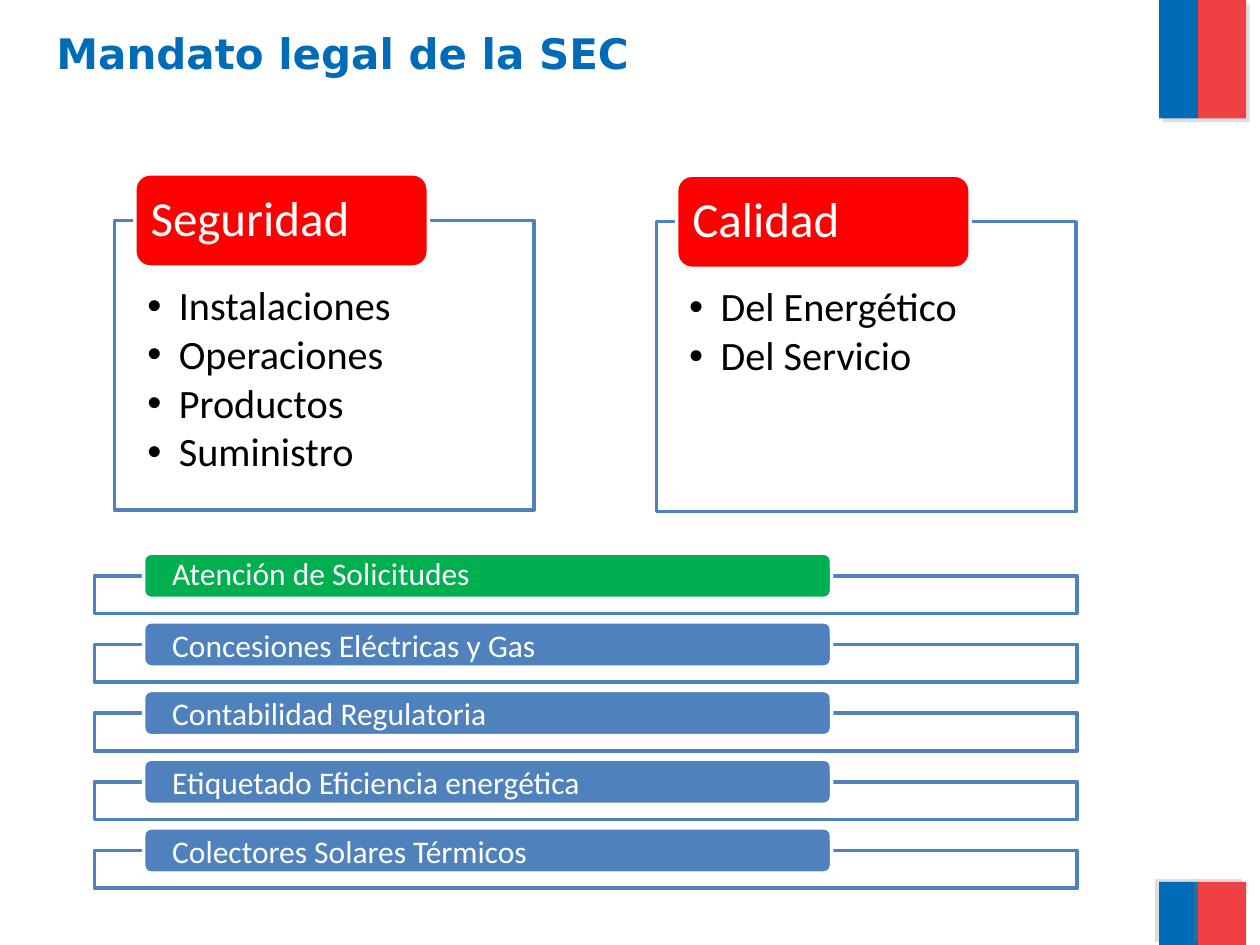
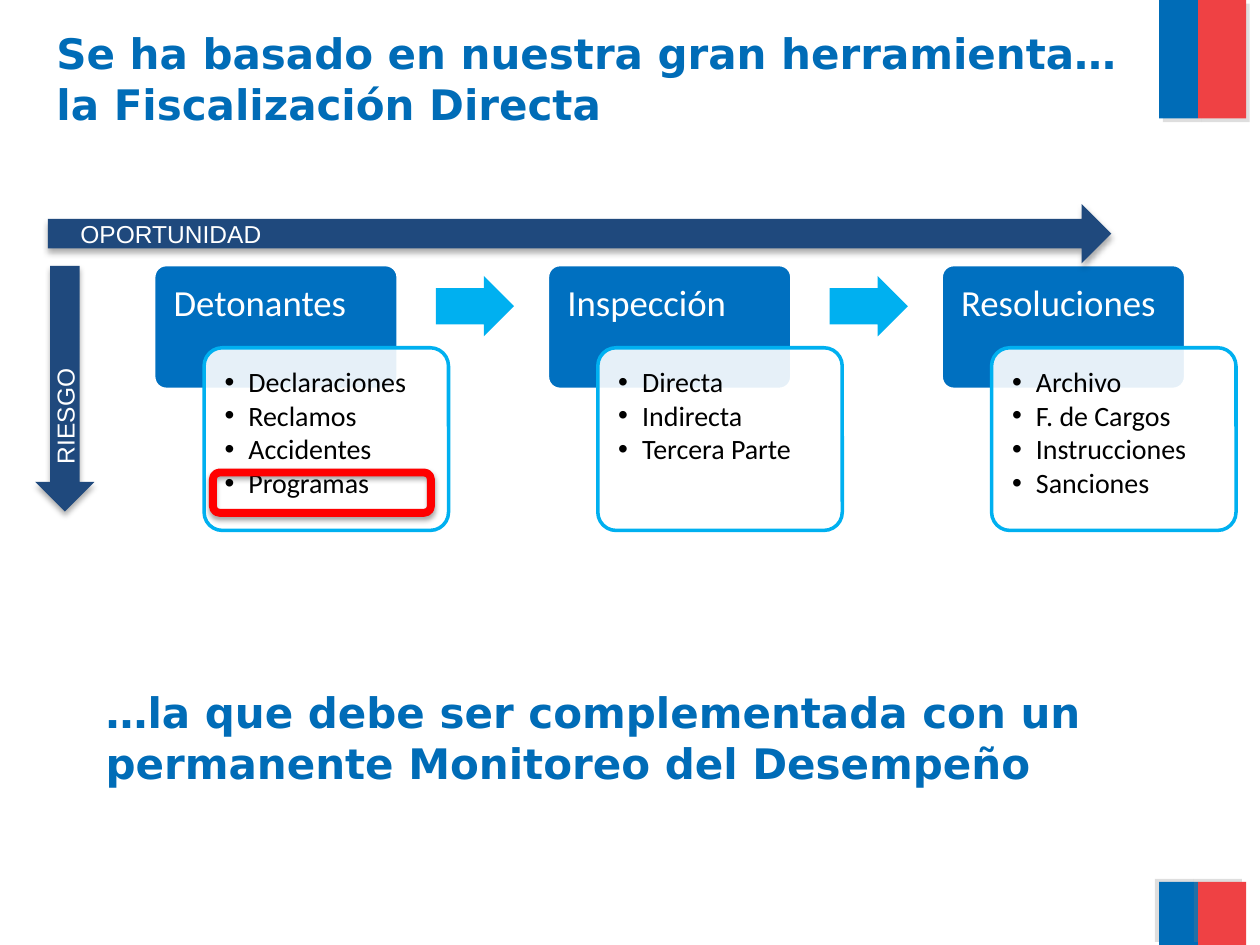
import lxml.etree
import pptx
import pptx.dml.color
import pptx.enum.shapes
import pptx.enum.text
import pptx.oxml.ns
import pptx.util

Inches, Pt = pptx.util.Inches, pptx.util.Pt
qn = pptx.oxml.ns.qn
PRESET = pptx.enum.shapes.MSO_SHAPE
ANCHOR = pptx.enum.text.MSO_ANCHOR

# Content
MANDATE_TITLE = "Mandato legal de la SEC"
MANDATES = [  # left, top, heading, items
    (0.91, 1.75, "Seguridad", ["Instalaciones", "Operaciones", "Productos", "Suministro"]),
    (5.21, 1.76, "Calidad", ["Del Energético", "Del Servicio"]),
]
DUTIES = [
    ("Atención de Solicitudes", "00B050"),
    ("Concesiones Eléctricas y Gas", "4F81BD"),
    ("Contabilidad Regulatoria", "4F81BD"),
    ("Etiquetado Eficiencia energética", "4F81BD"),
    ("Colectores Solares Térmicos", "4F81BD"),
]
INSPECTION_TITLE = "Se ha basado en nuestra gran herramienta…la Fiscalización Directa"
STAGES = [
    ("Detonantes", ["Declaraciones", "Reclamos", "Accidentes", "Programas"]),
    ("Inspección", ["Directa", "Indirecta", "Tercera Parte"]),
    ("Resoluciones", ["Archivo", "F. de Cargos", "Instrucciones", "Sanciones"]),
]
AXES = [  # box, preset, label, text direction
    ((0.38, 1.62, 8.44, 0.47), PRESET.RIGHT_ARROW, "OPORTUNIDAD", "horz"),
    ((0.28, 2.11, 0.47, 1.95), PRESET.DOWN_ARROW, "RIESGO", "vert270"),
]
CLOSING = "…la que debe ser complementada con un permanente Monitoreo del Desempeño"

# Shared look
BRAND_BLUE, BRAND_RED = "006CB7", "EF4144"
FRAME_BLUE, STAGE_BLUE, SKY, NAVY = "4F81BD", "0070C0", "00B0F0", "1F497D"
WHITE, BLACK, RED = "FFFFFF", "000000", "FF0000"
BANDS = [  # box, colour, shadow angle
    ((9.2, -0.01, 0.31, 0.95), BRAND_BLUE, 45),
    ((9.51, 0, 0.38, 0.94), BRAND_RED, 45),
    ((9.2, 7, 0.31, 0.5), BRAND_BLUE, 215),
    ((9.51, 7, 0.38, 0.5), BRAND_RED, 215),
]


def rgb(color):
    return pptx.dml.color.RGBColor.from_string(color)


def add_shadow(shape, color, opacity, blur, distance, angle):
    effects = shape._element.spPr.find(qn("a:effectLst"))
    shadow = lxml.etree.SubElement(
        effects, qn("a:outerShdw"), blurRad=str(Pt(blur)), dist=str(Pt(distance)),
        dir=str(angle * 60000), algn="ctr", rotWithShape="0")
    tint = lxml.etree.SubElement(shadow, qn("a:srgbClr"), val=color)
    lxml.etree.SubElement(tint, qn("a:alpha"), val=str(opacity * 1000))


def add_box(slide, box, fill=None, line=None, width=2, preset=PRESET.RECTANGLE,
            adjust=(), opacity=100, shadow=None):
    shape = slide.shapes.add_shape(preset, *map(Inches, box))
    shape.shadow.inherit = False
    for index, value in enumerate(adjust):
        shape.adjustments[index] = value
    if fill:
        shape.fill.solid()
        shape.fill.fore_color.rgb = rgb(fill)
        if opacity < 100:
            tint = shape._element.spPr.find(qn("a:solidFill"))[0]
            lxml.etree.SubElement(tint, qn("a:alpha"), val=str(opacity * 1000))
    else:
        shape.fill.background()
    if line:
        shape.line.color.rgb = rgb(line)
        shape.line.width = Pt(width)
    else:
        shape.line.fill.background()
    if shadow:
        add_shadow(shape, *shadow)
    return shape


def write(shape, lines, size, color, font="Calibri", insets=(0.1, 0.05, 0.1, 0.05),
          anchor=ANCHOR.TOP, bold=False, spacing=None, after=0, indent=0, bullet=False):
    frame = shape.text_frame
    frame.word_wrap = True
    frame.vertical_anchor = anchor
    (frame.margin_left, frame.margin_top,
     frame.margin_right, frame.margin_bottom) = map(Inches, insets)
    for index, text in enumerate(lines):
        paragraph = frame.add_paragraph() if index else frame.paragraphs[0]
        properties = paragraph._p.get_or_add_pPr()
        properties.set("marL", str(Inches(indent)))
        if bullet:
            properties.set("indent", str(-Inches(indent)))
            lxml.etree.SubElement(properties, qn("a:buFont"), typeface="Arial")
            lxml.etree.SubElement(properties, qn("a:buChar"), char="•")
        paragraph.alignment = pptx.enum.text.PP_ALIGN.LEFT
        paragraph.space_after = Pt(after)
        if spacing:
            paragraph.line_spacing = spacing
        run = paragraph.add_run()
        run.text = text
        run.font.name = font
        run.font.size = Pt(size)
        run.font.bold = bold
        run.font.color.rgb = rgb(color)


def add_statement(slide, box, text):
    statement = slide.shapes.add_textbox(*map(Inches, box))
    write(statement, [text], 24, BRAND_BLUE, "DejaVu Sans", bold=True)


def add_slide(deck, title):
    slide = deck.slides.add_slide(deck.slide_layouts[6])
    for box, color, angle in BANDS:
        add_box(slide, box, color, shadow=("808080", 25, 0, 3, angle))
    add_statement(slide, (0.35, 0.17, 8.74, 1.25), title)
    return slide


def build_mandate(deck):
    slide = add_slide(deck, MANDATE_TITLE)

    # Framed lists with red headings
    for left, top, heading, items in MANDATES:
        frame = add_box(slide, (left, top, 3.33, 2.3), WHITE, FRAME_BLUE, opacity=90)
        write(frame, items, 23, BLACK, insets=(0.26, 0.52, 0.26, 0.18),
              spacing=0.9, after=3, indent=0.25, bullet=True)
        label = add_box(slide, (left + 0.16, top - 0.37, 2.33, 0.74), RED, WHITE,
                        preset=PRESET.ROUNDED_RECTANGLE)
        write(label, [heading], 28, WHITE, insets=(0.09, 0, 0.09, 0),
              anchor=ANCHOR.MIDDLE, spacing=0.9)

    # Stacked duties, evenly spaced
    first_top, last_top = 4.57, 6.75
    pitch = (last_top - first_top) / (len(DUTIES) - 1)
    for row, (duty, color) in enumerate(DUTIES):
        top = first_top + row * pitch
        add_box(slide, (0.75, top, 7.8, 0.3), WHITE, FRAME_BLUE)
        label = add_box(slide, (1.14, top - 0.18, 5.46, 0.36), color, WHITE,
                        preset=PRESET.ROUNDED_RECTANGLE)
        write(label, [duty], 18, WHITE, insets=(0.21, 0, 0.21, 0),
              anchor=ANCHOR.MIDDLE, spacing=1 if row else 0.9)


def build_inspection(deck):
    slide = add_slide(deck, INSPECTION_TITLE)

    # Stages with their lists, joined by block arrows
    first_left, last_left = 1.22, 7.47
    pitch = (last_left - first_left) / (len(STAGES) - 1)
    for column, (stage, items) in enumerate(STAGES):
        left = first_left + column * pitch
        heading = add_box(slide, (left, 2.1, 1.94, 0.99), STAGE_BLUE, WHITE,
                          preset=PRESET.ROUNDED_RECTANGLE, adjust=[0.1])
        write(heading, [stage], 21, WHITE, insets=(0.13, 0.13, 0.13, 0.09), spacing=0.9)
        card = add_box(slide, (left + 0.4, 2.76, 1.94, 1.45), WHITE, SKY,
                       preset=PRESET.ROUNDED_RECTANGLE, adjust=[0.1], opacity=90)
        write(card, items, 16, BLACK, insets=(0.12,) * 4,
              spacing=0.9, after=2, indent=0.19, bullet=True)
        if column < len(STAGES) - 1:
            add_box(slide, (left + 2.24, 2.19, 0.62, 0.48), SKY,
                    preset=PRESET.RIGHT_ARROW, adjust=[0.6, 0.5])

    # Axis arrows
    for box, preset, label, direction in AXES:
        axis = add_box(slide, box, NAVY, preset=preset, shadow=(BLACK, 32, 3.5, 2.2, 90))
        write(axis, [label], 14, WHITE, "Arial", anchor=ANCHOR.MIDDLE, indent=0.16)
        axis.text_frame._txBody.bodyPr.set("vert", direction)

    # Highlight around the last trigger, then the closing statement
    add_box(slide, (1.69, 3.75, 1.73, 0.32), line=RED, width=4.5,
            preset=PRESET.ROUNDED_RECTANGLE, shadow=(BLACK, 35, 3.1, 1.8, 90))
    add_statement(slide, (0.74, 5.4, 8.67, 0.91), CLOSING)


def main():
    deck = pptx.Presentation()
    deck.slide_width, deck.slide_height = Inches(10), Inches(7.5)
    build_mandate(deck)
    build_inspection(deck)
    deck.save("out.pptx")


if __name__ == "__main__":
    main()
